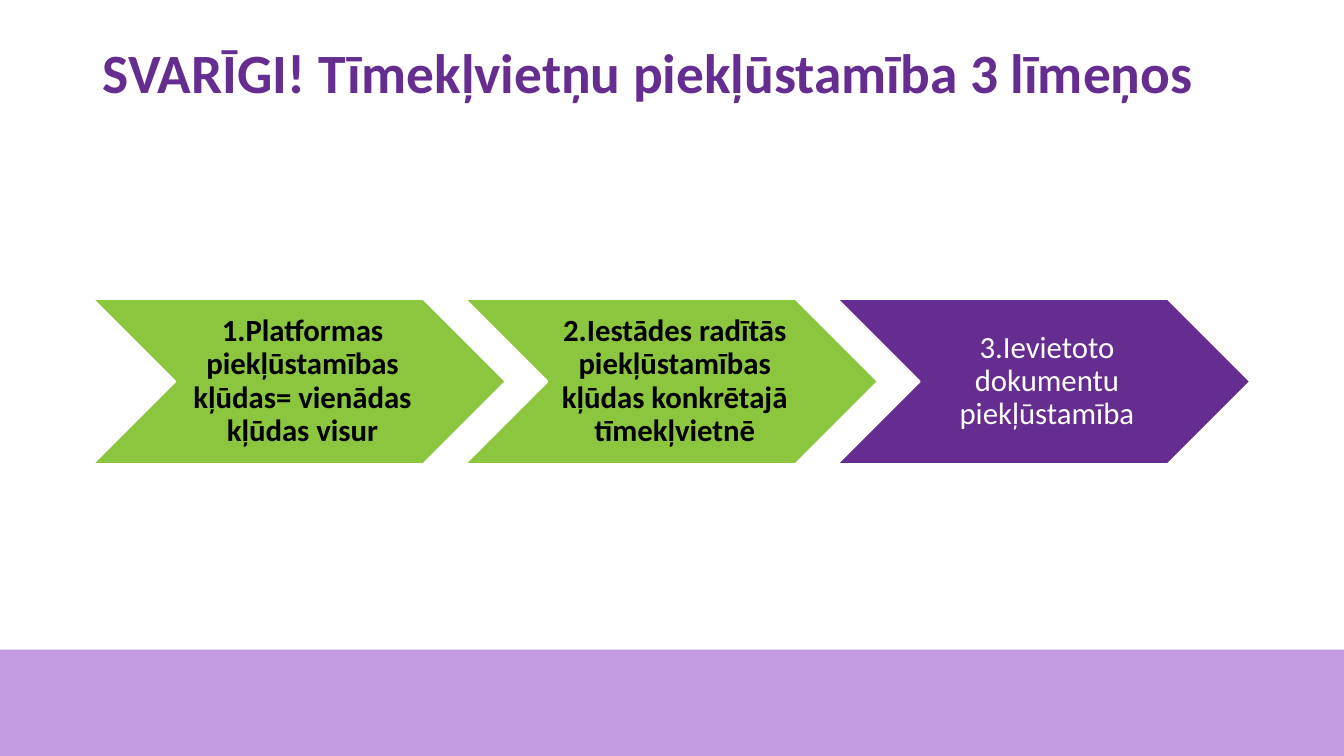
from pptx import Presentation
from pptx.dml.color import RGBColor
from pptx.enum.shapes import MSO_SHAPE as Preset
from pptx.enum.text import MSO_ANCHOR as Anchor, PP_ALIGN as Align
from pptx.util import Cm, Pt

PURPLE = RGBColor(0x66, 0x2D, 0x91)
LILAC = RGBColor(0xC4, 0x9D, 0xE1)
GREEN = RGBColor(0x8C, 0xC6, 0x3F)
BLACK = RGBColor(0, 0, 0)
WHITE = RGBColor(0xFF, 0xFF, 0xFF)

SLIDE_WIDTH, SLIDE_HEIGHT = 33.87, 19.05
MARGIN = 2.33
STEP_TOP, STEP_WIDTH, STEP_HEIGHT = 7.53, 10.42, 4.17
STEP_PITCH = 9.38

# Text, fill, text colour, bold
STEPS = [
    ("1.Platformas piekļūstamības kļūdas= vienādas kļūdas visur", GREEN, BLACK, True),
    ("2.Iestādes radītās piekļūstamības kļūdas konkrētajā tīmekļvietnē", GREEN, BLACK, True),
    ("3.Ievietoto dokumentu piekļūstamība", PURPLE, WHITE, False),
]


def write_text(text_frame, text, size, color, bold, alignment):
    text_frame.text = text
    text_frame.word_wrap = True
    text_frame.vertical_anchor = Anchor.MIDDLE
    paragraph = text_frame.paragraphs[0]
    paragraph.alignment = alignment
    paragraph.line_spacing = 0.9
    font = paragraph.runs[0].font
    font.name = "Calibri"
    font.size = Pt(size)
    font.bold = bold
    font.color.rgb = color


def add_filled_shape(slide, preset, left, top, width, height, fill):
    shape = slide.shapes.add_shape(preset, Cm(left), Cm(top), Cm(width), Cm(height))
    shape.shadow.inherit = False
    shape.fill.solid()
    shape.fill.fore_color.rgb = fill
    shape.line.fill.background()
    return shape


def set_title(slide, text):
    title = slide.shapes.title
    title.left, title.top = Cm(MARGIN), Cm(0.71)
    title.width, title.height = Cm(29.21), Cm(2.39)
    write_text(title.text_frame, text, 39.6, PURPLE, True, Align.LEFT)


def add_step(slide, left, text, fill, color, bold):
    chevron = add_filled_shape(slide, Preset.CHEVRON, left, STEP_TOP,
                               STEP_WIDTH, STEP_HEIGHT, fill)
    chevron.line.color.rgb = WHITE
    chevron.line.width = Pt(1.5)
    text_frame = chevron.text_frame
    text_frame.margin_left = Cm(0.25)
    text_frame.margin_top = text_frame.margin_right = text_frame.margin_bottom = Cm(0.08)
    write_text(text_frame, text, 22, color, bold, Align.CENTER)


def main():
    presentation = Presentation()
    presentation.slide_width = Cm(SLIDE_WIDTH)
    presentation.slide_height = Cm(SLIDE_HEIGHT)
    slide = presentation.slides.add_slide(presentation.slide_layouts.get_by_name("Title Only"))

    # Bottom band
    band_top = 16.37
    add_filled_shape(slide, Preset.RECTANGLE, 0, band_top,
                     SLIDE_WIDTH, SLIDE_HEIGHT - band_top, LILAC)

    # Title
    set_title(slide, "SVARĪGI! Tīmekļvietņu piekļūstamība 3 līmeņos")

    # Three levels as a row of chevrons
    for index, step in enumerate(STEPS):
        add_step(slide, MARGIN + index * STEP_PITCH, *step)

    presentation.save("out.pptx")


if __name__ == "__main__":
    main()
